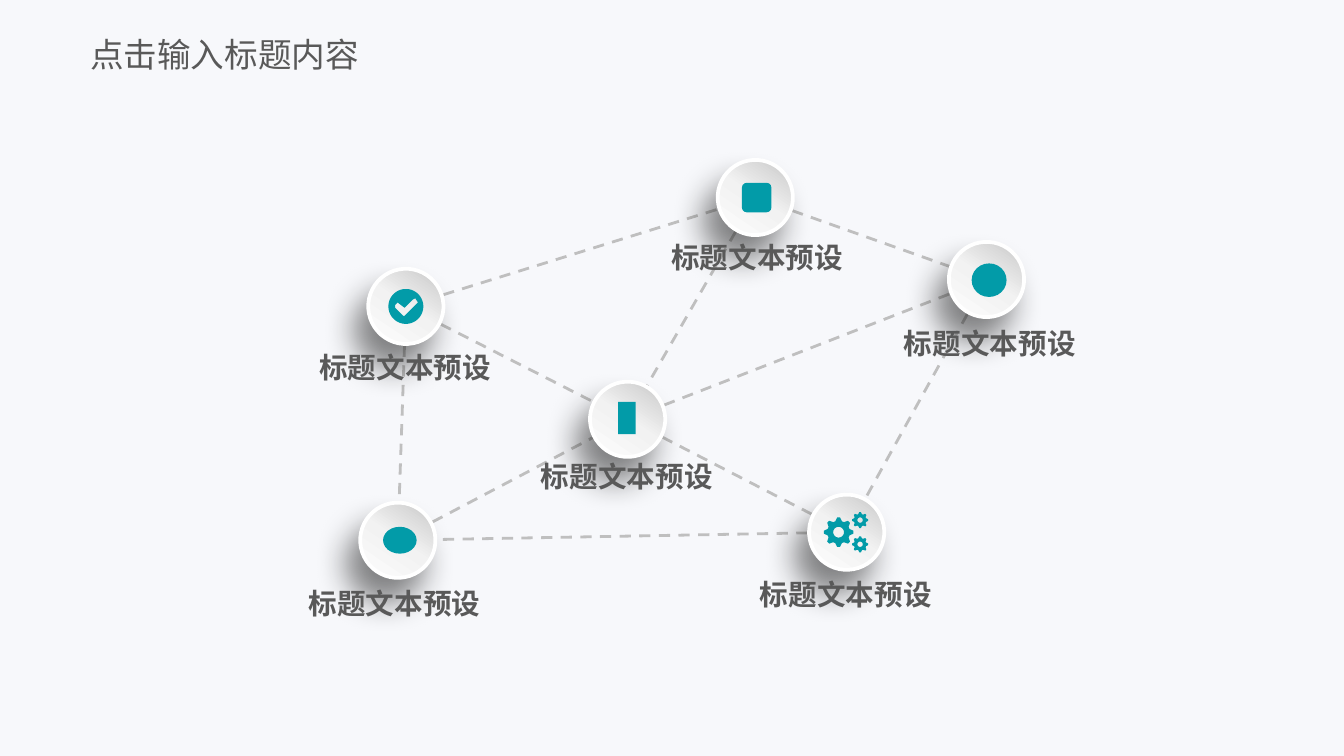
import math
from dataclasses import dataclass

from lxml import etree
from pptx import Presentation
from pptx import util as u
from pptx.dml.color import RGBColor
from pptx.enum import dml, shapes, text
from pptx.oxml import parse_xml
from pptx.oxml.ns import nsdecls, qn

FONT = "Noto Sans CJK SC"
BACKGROUND = RGBColor(0xF7, 0xF8, 0xFB)
WHITE = RGBColor(0xFF, 0xFF, 0xFF)
LINK_GRAY = RGBColor(0xBF, 0xBF, 0xBF)
DISC_GRAY = RGBColor(0xF2, 0xF2, 0xF2)
SHADOW = RGBColor(0x0D, 0x0D, 0x0D)
TEAL = RGBColor(0x02, 0x9B, 0xA8)
TEXT_GRAY = RGBColor(0x59, 0x59, 0x59)

DISC_SIZE = 0.56
LABEL_WIDTH, LABEL_HEIGHT = 1.43, 0.22
LABEL_TEXT = "标题文本预设"


@dataclass
class Node:
    x: float
    y: float
    label_left: float
    label_top: float


NODES = {
    "check": Node(3.02, 2.28, 2.3, 2.62),
    "lower_left": Node(2.96, 4.02, 2.22, 4.38),
    "center": Node(4.67, 3.12, 3.95, 3.43),
    "gears": Node(6.3, 3.96, 5.58, 4.31),
    "top": Node(5.62, 1.47, 4.92, 1.8),
    "right": Node(7.34, 2.08, 6.65, 2.44),
}
LINKS = [
    ("check", "center"), ("lower_left", "center"), ("check", "lower_left"),
    ("top", "center"), ("check", "top"), ("top", "right"),
    ("center", "right"), ("gears", "center"), ("right", "gears"),
    ("gears", "lower_left"),
]
PLAIN_ICONS = [
    (shapes.MSO_SHAPE.RECTANGLE, 4.6, 2.99, 0.13, 0.24),
    (shapes.MSO_SHAPE.OVAL, 2.85, 3.92, 0.25, 0.2),
    (shapes.MSO_SHAPE.OVAL, 7.23, 1.96, 0.26, 0.25),
    (shapes.MSO_SHAPE.ROUNDED_RECTANGLE, 5.52, 1.36, 0.22, 0.22),
]
CHECK_MARK = [
    (3.11, 2.25), (3.01, 2.35), (3, 2.35), (2.94, 2.29), (2.94, 2.27),
    (2.96, 2.25), (2.97, 2.26), (3.01, 2.29), (3.07, 2.23), (3.09, 2.22),
]
GEARS = [
    (6.24, 3.96, 0.11, 0.04),
    (6.4, 3.87, 0.06, 0.02),
    (6.4, 4.05, 0.06, 0.02),
]


def paint(shape, color):
    shape.shadow.inherit = False
    shape.fill.solid()
    shape.fill.fore_color.rgb = color
    shape.line.fill.background()


def add_link(slide, start, end):
    ends = [u.Inches(value) for value in (start.x, start.y, end.x, end.y)]
    link = slide.shapes.add_connector(shapes.MSO_CONNECTOR.STRAIGHT, *ends)
    link.line.color.rgb = LINK_GRAY
    link.line.width = u.Pt(1.5)
    link.line.dash_style = dml.MSO_LINE.DASH
    etree.SubElement(link._element.spPr, qn("a:effectLst"))


def add_disc(slide, node):
    left, top = node.x - DISC_SIZE / 2, node.y - DISC_SIZE / 2
    disc = slide.shapes.add_shape(
        shapes.MSO_SHAPE.OVAL, u.Inches(left), u.Inches(top),
        u.Inches(DISC_SIZE), u.Inches(DISC_SIZE))
    paint(disc, DISC_GRAY)
    disc.rotation = 349.1
    disc.line.color.rgb = WHITE
    disc.line.width = u.Pt(2)
    properties = disc._element.spPr
    stops = "".join(
        f'<a:gs pos="{position}"><a:srgbClr val="{color}"/></a:gs>'
        for position, color in ((0, LINK_GRAY), (50000, DISC_GRAY), (100000, WHITE)))
    gradient = parse_xml(
        f'<a:gradFill {nsdecls("a")} rotWithShape="1"><a:gsLst>{stops}</a:gsLst>'
        '<a:lin ang="8100000" scaled="0"/></a:gradFill>')
    properties.replace(properties.find(qn("a:solidFill")), gradient)
    properties.find(qn("a:effectLst")).append(parse_xml(
        f'<a:outerShdw {nsdecls("a")} blurRad="{u.Pt(17)}" dist="{u.Pt(14)}" '
        f'dir="7200000" algn="ctr" rotWithShape="0"><a:srgbClr val="{SHADOW}">'
        '<a:alpha val="50000"/></a:srgbClr></a:outerShdw>'))


def ring(x, y, radii):
    step = 2 * math.pi / len(radii)
    return [(x + radius * math.cos((i + 0.5) * step),
             y + radius * math.sin((i + 0.5) * step))
            for i, radius in enumerate(radii)]


def gear_contours(x, y, radius, hole):
    inner = radius * 0.77
    tooth = [radius, inner, inner, radius]
    return [ring(x, y, tooth * 8), ring(x, y, [hole] * 32)]


def add_outline_icon(slide, contours):
    contours = [[(u.Inches(x), u.Inches(y)) for x, y in contour]
                for contour in contours]
    builder = slide.shapes.build_freeform(*contours[0][0], scale=1.0)
    builder.add_line_segments(contours[0][1:], close=True)
    for contour in contours[1:]:
        builder.move_to(*contour[0])
        builder.add_line_segments(contour[1:], close=True)
    paint(builder.convert_to_shape(), TEAL)


def add_plain_icon(slide, kind, *box):
    paint(slide.shapes.add_shape(kind, *map(u.Inches, box)), TEAL)


def add_text(slide, box, content, size, bold=False, wrap=True, margin=0,
             alignment=text.PP_ALIGN.LEFT):
    frame = slide.shapes.add_textbox(*map(u.Inches, box)).text_frame
    frame.word_wrap = wrap
    frame.vertical_anchor = text.MSO_ANCHOR.MIDDLE
    frame.margin_left = frame.margin_right = 0
    frame.margin_top = frame.margin_bottom = u.Inches(margin)
    paragraph = frame.paragraphs[0]
    paragraph.text = content
    paragraph.alignment = alignment
    font = paragraph.font
    font.name, font.size, font.bold = FONT, u.Pt(size), bold
    font.color.rgb = TEXT_GRAY
    east_asian = etree.SubElement(font._element, qn("a:ea"))
    east_asian.set("typeface", FONT)


def main():
    presentation = Presentation()
    presentation.slide_width = u.Inches(10)
    presentation.slide_height = presentation.slide_width * 9 // 16
    slide = presentation.slides.add_slide(presentation.slide_layouts[6])
    slide.background.fill.solid()
    slide.background.fill.fore_color.rgb = BACKGROUND

    for start, end in LINKS:
        add_link(slide, NODES[start], NODES[end])
    for node in NODES.values():
        add_disc(slide, node)
    for icon in PLAIN_ICONS:
        add_plain_icon(slide, *icon)
    add_outline_icon(slide, [
        contour for gear in GEARS for contour in gear_contours(*gear)])
    add_outline_icon(slide, [ring(3.02, 2.28, [0.13] * 48), CHECK_MARK])
    for node in NODES.values():
        add_text(slide, (node.label_left, node.label_top, LABEL_WIDTH, LABEL_HEIGHT),
                 LABEL_TEXT, 15.3, bold=True, wrap=False,
                 alignment=text.PP_ALIGN.CENTER)
    add_text(slide, (0.67, 0.19, 2.33, 0.42), "点击输入标题内容", 18, margin=0.05)

    presentation.save("out.pptx")


if __name__ == "__main__":
    main()
